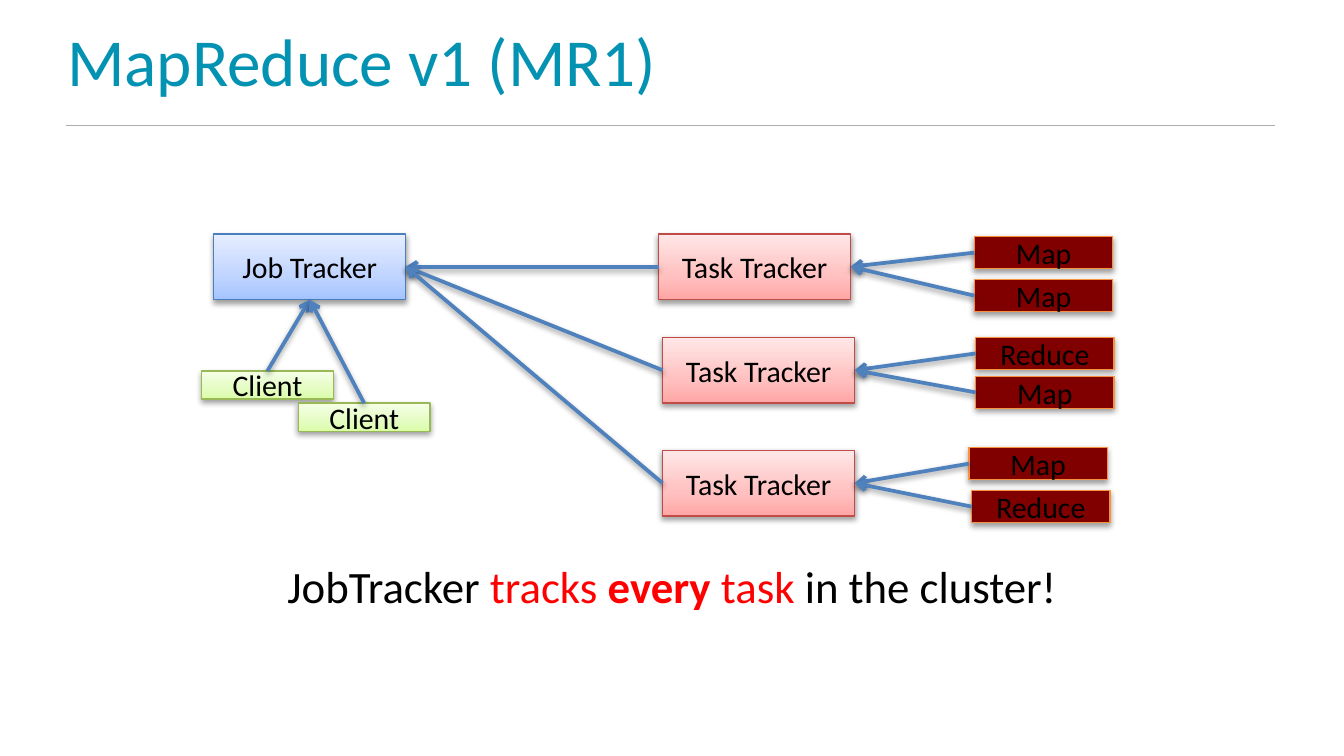
from copy import deepcopy

from lxml import etree
from pptx import Presentation
from pptx.dml.color import RGBColor
from pptx.enum.shapes import MSO_CONNECTOR, MSO_SHAPE
from pptx.enum.text import MSO_ANCHOR, MSO_AUTO_SIZE, PP_ALIGN
from pptx.oxml.ns import qn
from pptx.util import Inches, Pt

RECTANGLE = MSO_SHAPE.RECTANGLE
STRAIGHT = MSO_CONNECTOR.STRAIGHT
LEFT, CENTER = PP_ALIGN.LEFT, PP_ALIGN.CENTER
MIDDLE, TOP = MSO_ANCHOR.MIDDLE, MSO_ANCHOR.TOP
NO_FIT = MSO_AUTO_SIZE.NONE
TOP_SIDE, LEFT_SIDE, BOTTOM_SIDE, RIGHT_SIDE = range(4)
hex_color = RGBColor.from_string


def write(shape, text, size=16, color="000000", bold=False, align=CENTER, anchor=MIDDLE):
    frame = shape.text_frame
    frame.word_wrap = True
    frame.auto_size = NO_FIT
    frame.vertical_anchor = anchor
    paragraph = frame.paragraphs[0]
    paragraph.alignment = align
    run = paragraph.add_run()
    run.text = text
    run.font.name = "Calibri"
    run.font.size = Pt(size)
    run.font.bold = bold
    run.font.color.rgb = hex_color(color)
    return paragraph


def set_shadow(shape, visible=True):
    effects = etree.SubElement(shape._element.spPr, qn("a:effectLst"))
    if visible:
        shadow = etree.SubElement(effects, qn("a:outerShdw"), blurRad="40000",
                                  dist="20000", dir="5400000", rotWithShape="0")
        black = etree.SubElement(shadow, qn("a:srgbClr"), val="000000")
        etree.SubElement(black, qn("a:alpha"), val="38000")


deck = Presentation()
deck.slide_width, deck.slide_height = Pt(720), Pt(405)
slide = deck.slides.add_slide(deck.slide_layouts[5])
shapes = slide.shapes

rule = shapes.add_connector(STRAIGHT, Inches(0.49), Inches(0.93), Inches(9.49), Inches(0.93))
rule.line.color.rgb = hex_color("AEAEAE")
rule.line.width = Pt(0.5)
set_shadow(rule, visible=False)

title = shapes.title
title.left, title.top, title.width, title.height = map(Inches, (0.4, 0.03, 9, 0.94))
write(title, "MapReduce v1 (MR1)", size=36, color="0392B2", align=LEFT).line_spacing = 0.8

styles = {
    "job": (1.43, 0.49, "4B7EBC", ["A4C4FF", "BFD4FF", "E6EEFF"]),
    "tracker": (1.43, 0.49, "BF4C48", ["FFA6A5", "FFC0BF", "FFE7E7"]),
    "task": (1.03, 0.24, "F69240", ["800000"]),
    "client": (0.98, 0.21, "98B955", ["DAFDA7", "E4FCC2", "F5FFE7"]),
}
nodes = [
    ("job", "Job Tracker", 1.59, 1.74, None),
    ("tracker", "Task Tracker", 4.9, 1.74, 0),
    ("tracker", "Task Tracker", 4.93, 2.51, 0),
    ("tracker", "Task Tracker", 4.93, 3.35, 0),
    ("task", "Map", 7.25, 1.76, 1),
    ("task", "Map", 7.25, 2.08, 1),
    ("task", "Reduce", 7.26, 2.51, 2),
    ("task", "Map", 7.26, 2.8, 2),
    ("task", "Map", 7.21, 3.33, 3),
    ("task", "Reduce", 7.23, 3.65, 3),
    ("client", "Client", 1.5, 2.76, 0),
    ("client", "Client", 2.22, 3, 0),
]

boxes = []
for role, label, left, top, target in nodes:
    width, height, outline, colors = styles[role]
    box = shapes.add_shape(RECTANGLE, *map(Inches, (left, top, width, height)))
    if len(colors) == 1:
        box.fill.solid()
        box.fill.fore_color.rgb = hex_color(colors[0])
    else:
        box.fill.gradient()
        box.fill.gradient_angle = 90
        stop_list = box._element.spPr.find(qn("a:gradFill")).find(qn("a:gsLst"))
        stop_list.append(deepcopy(stop_list[0]))
        for stop, position, color in zip(box.fill.gradient_stops, (0, 0.35, 1), colors):
            stop.position = position
            stop.color.rgb = hex_color(color)
    box.line.color.rgb = hex_color(outline)
    box.line.width = Pt(0.75)
    set_shadow(box)
    write(box, label)
    boxes.append(box)

for box, (role, label, left, top, target) in zip(boxes, nodes):
    if target is None:
        continue
    start, end = (TOP_SIDE, BOTTOM_SIDE) if role == "client" else (LEFT_SIDE, RIGHT_SIDE)
    arrow = shapes.add_connector(STRAIGHT, 0, 0, 0, 0)
    arrow.begin_connect(box, start)
    arrow.end_connect(boxes[target], end)
    arrow.line.color.rgb = hex_color("4F81BD")
    arrow.line.width = Pt(2)
    etree.SubElement(arrow.line._get_or_add_ln(), qn("a:tailEnd"), type="arrow")
    set_shadow(arrow)

message = shapes.add_textbox(*map(Inches, (1.55, 4.11, 6.9, 0.5)))
for text, color, bold in [
    ("JobTracker ", "000000", False),
    ("tracks ", "FF0000", False),
    ("every", "FF0000", True),
    (" task", "FF0000", False),
    (" in the cluster!", "000000", False),
]:
    write(message, text, size=24, color=color, bold=bold, anchor=TOP)

deck.save("out.pptx")
